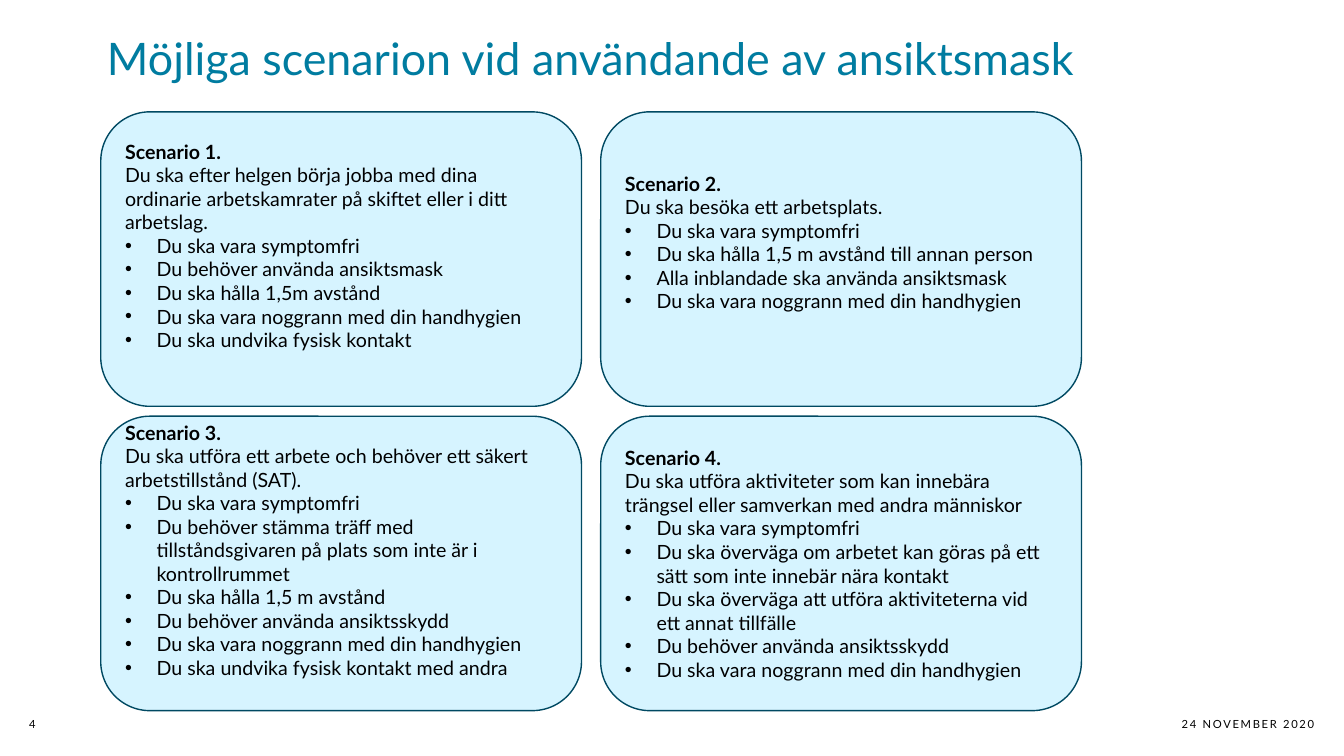
import pptx
import pptx.util
import pptx.dml.color
import pptx.enum.shapes
import pptx.enum.text
from lxml import etree

Pt = pptx.util.Pt
ALIGN = pptx.enum.text.PP_ALIGN
ANCHOR = pptx.enum.text.MSO_ANCHOR

# Content
TITLE = "Möjliga scenarion vid användande av ansiktsmask"
DATE = "24 NOVEMBER 2020"
PAGE = "4"
# heading, introduction, rules, room kept free under the text
SCENARIOS = [
    ("Scenario 1.",
     "Du ska efter helgen börja jobba med dina ordinarie arbetskamrater "
     "på skiftet eller i ditt arbetslag.",
     ["Du ska vara symptomfri",
      "Du behöver använda ansiktsmask",
      "Du ska hålla 1,5m avstånd",
      "Du ska vara noggrann med din handhygien",
      "Du ska undvika fysisk kontakt"], 19.2),
    ("Scenario 2.",
     "Du ska besöka ett arbetsplats.",
     ["Du ska vara symptomfri",
      "Du ska hålla 1,5 m avstånd till annan person",
      "Alla inblandade ska använda ansiktsmask",
      "Du ska vara noggrann med din handhygien"], 24),
    ("Scenario 3.",
     "Du ska utföra ett arbete och behöver ett säkert arbetstillstånd (SAT).",
     ["Du ska vara symptomfri",
      "Du behöver stämma träff med tillståndsgivaren på plats som inte är i "
      "kontrollrummet",
      "Du ska hålla 1,5 m avstånd",
      "Du behöver använda ansiktsskydd",
      "Du ska vara noggrann med din handhygien",
      "Du ska undvika fysisk kontakt med andra"], 19.2),
    ("Scenario 4.",
     "Du ska utföra aktiviteter som kan innebära trängsel eller samverkan "
     "med andra människor",
     ["Du ska vara symptomfri",
      "Du ska överväga om arbetet kan göras på ett sätt som inte innebär "
      "nära kontakt",
      "Du ska överväga att utföra aktiviteterna vid ett annat tillfälle",
      "Du behöver använda ansiktsskydd",
      "Du ska vara noggrann med din handhygien"], 0),
]

THEME = {
    "font": "Lato",
    "title": "007CA0", "text": "000000", "card": "D6F4FF", "edge": "004962",
    "title_size": 32, "body_size": 14, "footer_size": 8,
}

# Grid of cards
LEFT, TOP = 72, 79.9
CARD_W, CARD_H = 343.4, 210.3
GAP_X, GAP_Y = 13.7, 7.1
COLUMNS = 2
PAD_X, PAD_Y = 7.2, 3.6
INDENT = 22.5


def rgb(key):
    return pptx.dml.color.RGBColor.from_string(THEME[key])


def apply(target, formats):
    for name, value in formats.items():
        setattr(target, name, value)


def style(paragraph, size, color="text", bold=False):
    apply(paragraph.font, {"name": THEME["font"], "size": Pt(THEME[size]), "bold": bold})
    paragraph.font.color.rgb = rgb(color)


def set_frame(frame, anchor, left=0, top=0, right=0, bottom=0):
    apply(frame, {"word_wrap": True, "vertical_anchor": anchor,
                  "margin_left": Pt(left), "margin_top": Pt(top),
                  "margin_right": Pt(right), "margin_bottom": Pt(bottom)})


def add_label(text, box, size, color="text", align=ALIGN.LEFT):
    frame = slide.shapes.add_textbox(*map(Pt, box)).text_frame
    set_frame(frame, ANCHOR.BOTTOM)
    label = frame.paragraphs[0]
    label.text = text
    label.alignment = align
    style(label, size, color)
    return label


def add_bullet(paragraph):
    props = paragraph._p.get_or_add_pPr()
    props.set("marL", str(Pt(INDENT)))
    props.set("indent", str(-Pt(INDENT)))
    namespace = etree.QName(props).namespace
    etree.SubElement(props, f"{{{namespace}}}buFont", typeface="Arial")
    etree.SubElement(props, f"{{{namespace}}}buChar", char="•")


def add_scenario(index, heading, intro, rules, room_below):
    row, column = divmod(index, COLUMNS)
    card = slide.shapes.add_shape(
        pptx.enum.shapes.MSO_SHAPE.ROUNDED_RECTANGLE,
        Pt(LEFT + column * (CARD_W + GAP_X)), Pt(TOP + row * (CARD_H + GAP_Y)),
        Pt(CARD_W), Pt(CARD_H))
    card.shadow.inherit = False
    card.fill.solid()
    card.fill.fore_color.rgb = rgb("card")
    card.line.color.rgb = rgb("edge")
    card.line.width = Pt(1)

    frame = card.text_frame
    set_frame(frame, ANCHOR.MIDDLE, PAD_X, PAD_Y, PAD_X, PAD_Y + room_below)
    for number, text in enumerate([heading, intro, *rules]):
        paragraph = frame.add_paragraph() if number else frame.paragraphs[0]
        paragraph.text = text
        paragraph.alignment = ALIGN.LEFT
        if number > 1:
            add_bullet(paragraph)
        style(paragraph, "body_size", bold=number == 0)


presentation = pptx.Presentation()
apply(presentation, {"slide_width": Pt(960), "slide_height": Pt(540)})
slide = presentation.slides.add_slide(presentation.slide_layouts[6])

# Title
title = add_label(TITLE, (72, 13.7, 700, 46.8), "title_size", "title", ALIGN.CENTER)
title.line_spacing = 0.83

# Footer
date = add_label(DATE, (770.4, 507.6, 168.5, 14.4), "footer_size", align=ALIGN.RIGHT)
date.runs[0]._r.get_or_add_rPr().set("spc", "120")
add_label(PAGE, (20.9, 507.6, 31, 14.4), "footer_size")

# Scenario cards
for index, scenario in enumerate(SCENARIOS):
    add_scenario(index, *scenario)

presentation.save("out.pptx")
